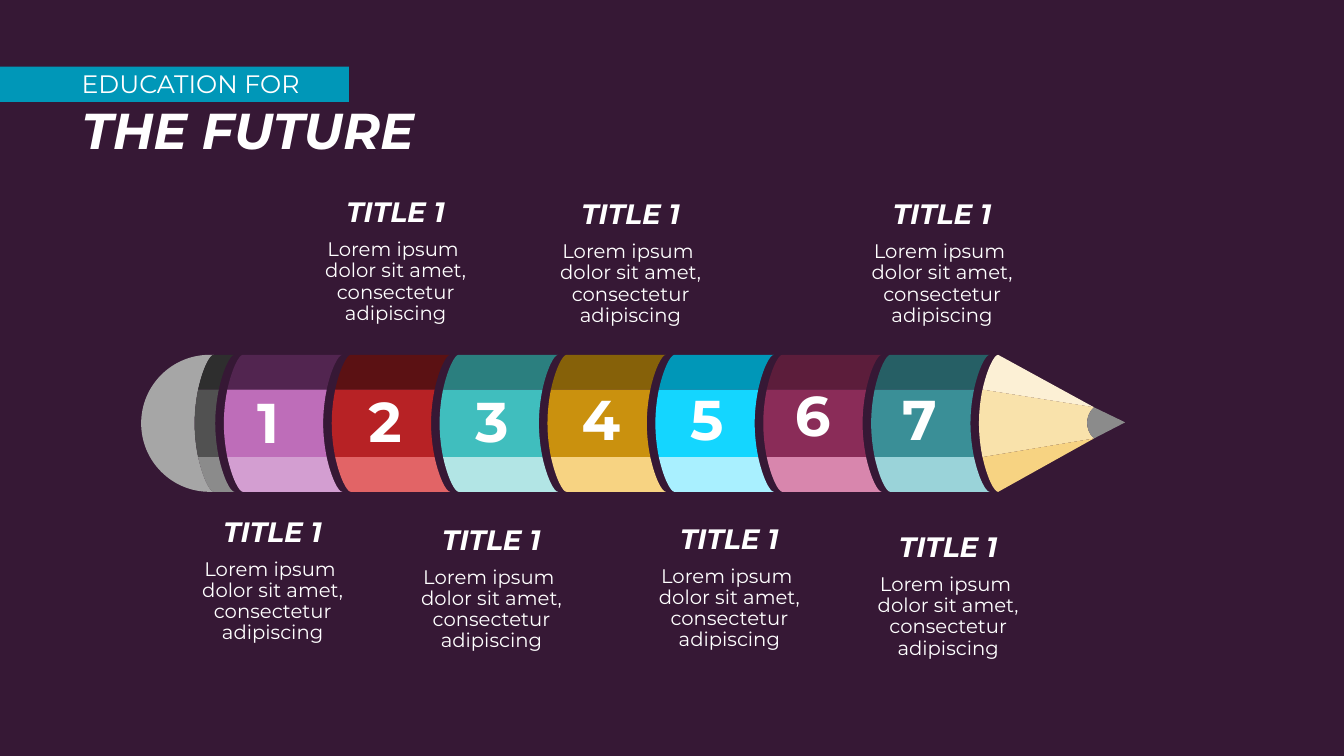
"""Build a pencil infographic slide with seven numbered colour bands."""
import dataclasses

import pptx
import pptx.dml.color
import pptx.enum.shapes
import pptx.enum.text
import pptx.oxml.ns
import pptx.util

COLUMNS, ROWS = 1333, 750
AXIS, RADIUS = 420, 68
ALIGN = pptx.enum.text.PP_ALIGN


@dataclasses.dataclass(frozen=True)
class Theme:
    font: str = "Montserrat"
    background: str = "361835"
    banner: str = "0097B8"
    text: str = "FFFFFF"
    eraser: str = "A6A6A6"
    ferrule: tuple = ("2E2E2E", "515151", "8B8B8B")
    wood: tuple = ("FCF0D5", "F9E2AB", "F7D382")
    lead: str = "8B8B8B"
    bands: tuple = (
        ("522550", "BE6DB9", "D39ED1"),
        ("5B1113", "B72225", "E26466"),
        ("2B7F7F", "40BEBE", "B2E5E5"),
        ("866109", "CA910E", "F7D382"),
        ("0097B8", "14D6FF", "A9F0FF"),
        ("5C1D3B", "8A2C58", "D886AD"),
        ("265F65", "3A8F97", "9AD3D9"),
    )
    headline: int = 36
    kicker: int = 18
    number: int = 40
    heading: int = 20
    body: int = 14


def mirror(points):
    return [(x, -y) for x, y in reversed(points)]


def symmetric(points):
    return points + mirror(points)[1:]


def shift(points, column):
    return [(column + x, AXIS + y) for x, y in points]


UPPER = [(19, -RADIUS), (15, -RADIUS), (8, -54), (3.5, -33.5)]
BELLY = symmetric([(3.5, -33.5), (1.5, -24), (0, -12), (0, 0)])
ZONES = (UPPER, BELLY, mirror(UPPER))
EDGE = UPPER + BELLY[1:] + mirror(UPPER)[1:]
CAP = symmetric([(0, RADIUS), (-37.6, RADIUS), (-RADIUS, 37.6), (-RADIUS, 0)])


class Slide:
    def __init__(self, deck, theme):
        self.theme = theme
        self.cell = (deck.slide_width / COLUMNS, deck.slide_height / ROWS)
        self.page = deck.slides.add_slide(deck.slide_layouts[5])
        self.paint(self.page.background.fill, theme.background)

    def place(self, *lengths):
        return [round(length * self.cell[i % 2]) for i, length in enumerate(lengths)]

    def paint(self, fill, color):
        fill.solid()
        fill.fore_color.rgb = pptx.dml.color.RGBColor.from_string(color)

    def finish(self, shape, color):
        shape.shadow.inherit = False
        self.paint(shape.fill, color)
        shape.line.fill.background()

    def outline(self, color, *curves):
        """Join Bezier point lists by straight lines and fill the outline."""
        start, *rest = [self.place(*point) for curve in curves for point in curve]
        builder = self.page.shapes.build_freeform(*start)
        builder.add_line_segments(rest, close=True)
        shape = builder.convert_to_shape()
        name = pptx.oxml.ns.qn
        segments = [None, *shape.element.iter(name("a:lnTo"))]
        offset = 0
        for curve in curves:
            for first in range(offset + 1, offset + len(curve), 3):
                bend, *others = segments[first:first + 3]
                bend.tag = name("a:cubicBezTo")
                for other in others:
                    bend.append(other[0])
                    other.getparent().remove(other)
            offset += len(curve)
        self.finish(shape, color)

    def style(self, para, size, align, bold=False, italic=False):
        para.alignment = align
        font = para.font
        font.name, font.size = self.theme.font, pptx.util.Pt(size)
        font.bold, font.italic = bold, italic
        self.paint(font.fill, self.theme.text)

    def text(self, area, words, size, spacing=1.0, bold=False, italic=False):
        frame = self.page.shapes.add_textbox(*self.place(*area)).text_frame
        frame.word_wrap = True
        para = frame.paragraphs[0]
        para.text = words
        para.line_spacing = spacing
        self.style(para, size, ALIGN.CENTER, bold, italic)

    def title(self, area, kicker, headline):
        box = self.page.shapes.title
        box.left, box.top, box.width, box.height = self.place(*area)
        frame = box.text_frame
        frame.text = f"{kicker}\n{headline}"
        frame.word_wrap = True
        frame.auto_size = pptx.enum.text.MSO_AUTO_SIZE.NONE
        frame.vertical_anchor = pptx.enum.text.MSO_ANCHOR.TOP
        self.style(frame.paragraphs[0], self.theme.kicker, ALIGN.LEFT)
        self.style(frame.paragraphs[1], self.theme.headline, ALIGN.LEFT, True, True)

    def banner(self, area):
        rectangle = pptx.enum.shapes.MSO_SHAPE.RECTANGLE
        box = self.page.shapes.add_shape(rectangle, *self.place(*area))
        self.finish(box, self.theme.banner)
        self.page.shapes.title.element.addprevious(box.element)

    def band(self, column, width, colors):
        for zone, color in zip(ZONES, colors):
            right = shift(zone, column + width)
            self.outline(color, shift(zone, column), right[::-1])

    def eraser(self, column):
        self.outline(self.theme.eraser, shift(EDGE, column), shift(CAP, column + 15))

    def tip(self, column):
        top, bottom = (1085, 404), (1085, 435)
        notch = [bottom, (1076, 427), (1076, 412), top]
        for zone, end, color in zip(ZONES, ([top], notch, [bottom]), self.theme.wood):
            self.outline(color, shift(zone, column), end)
        self.outline(self.theme.lead, notch, [(1116, 419)])

    def card(self, column, row):
        self.text((column, row, 217, 33), "TITLE 1", self.theme.heading, 0.9, True, True)
        words = "Lorem ipsum \vdolor sit amet, consectetur adipiscing"
        self.text((column, row + 41, 217, 112), words, self.theme.body, 0.9)


def main():
    deck = pptx.Presentation()
    deck.slide_width = pptx.util.Inches(13.33)
    deck.slide_height = pptx.util.Inches(7.5)
    theme = Theme()
    slide = Slide(deck, theme)
    slide.title((71, 63, 386, 101), "EDUCATION FOR", "THE FUTURE")
    slide.banner((0, 66, 346, 35))

    slide.eraser(193)
    slide.band(193, 20.5, theme.ferrule)
    slide.tip(971)
    numbers = ((237, 380), (353, 379), (459, 379), (567, 377),
               (672, 377), (777, 373), (883, 377))
    for index, (colors, corner) in enumerate(zip(theme.bands, numbers)):
        slide.band(222 + 107 * index, 98.5, colors)
        slide.text((*corner, 58, 77), str(index + 1), theme.number, bold=True)

    cards = ((162, 509), (284, 192), (379, 517), (517, 194),
             (615, 516), (826, 194), (832, 524))
    for column, row in cards:
        slide.card(column, row)
    deck.save("out.pptx")


if __name__ == "__main__":
    main()
